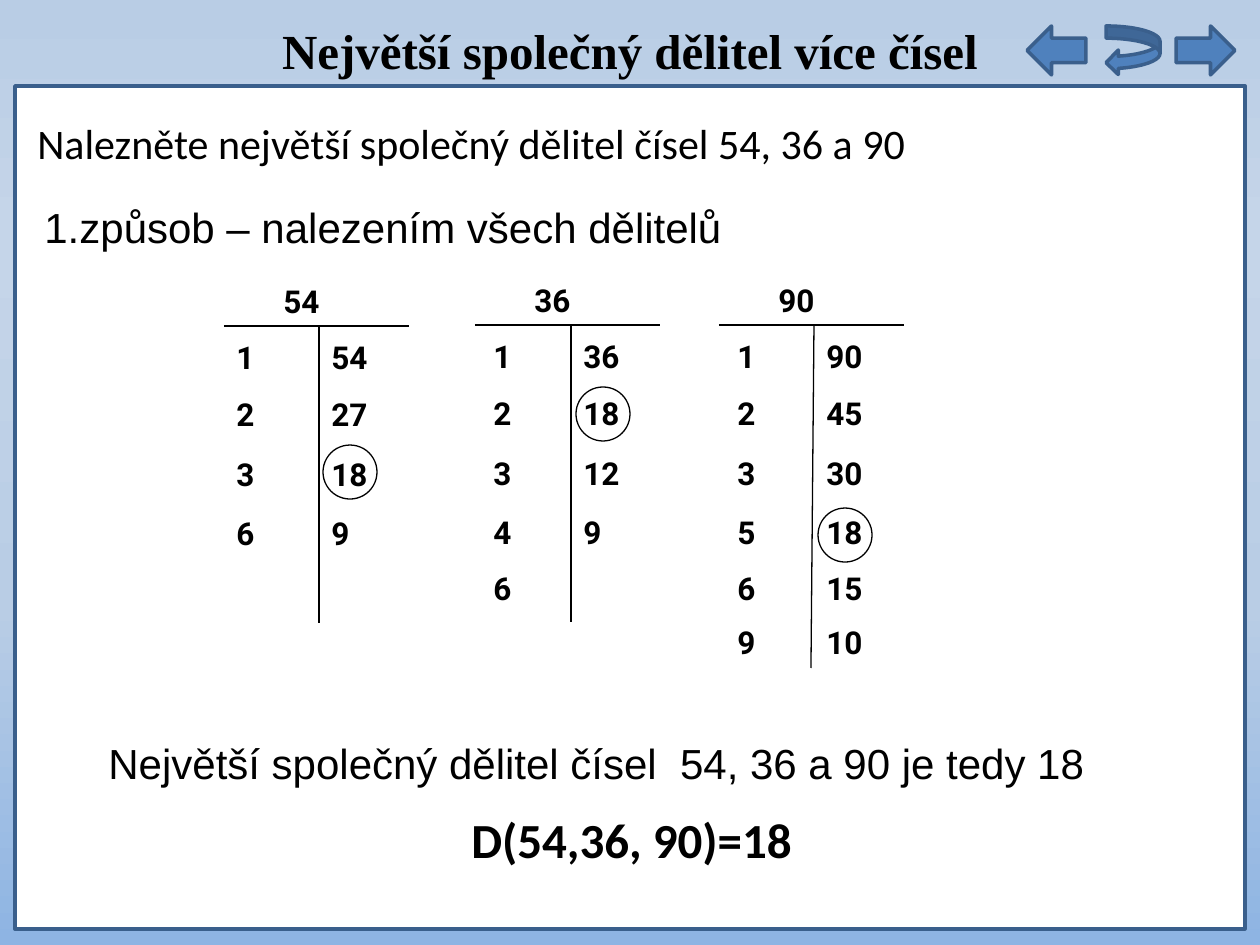
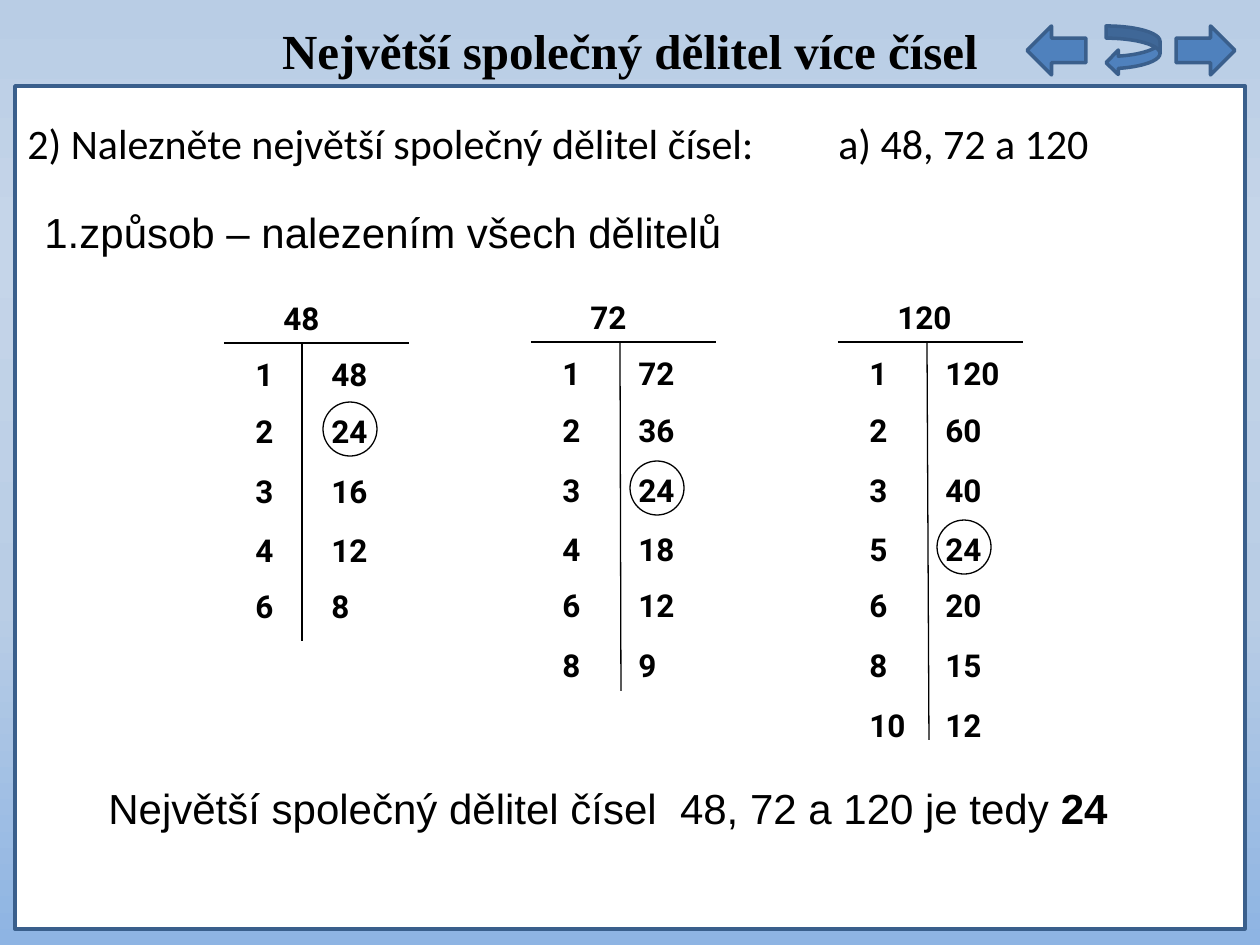
from dataclasses import dataclass
from typing import Any

from lxml import etree
from pptx import Presentation
from pptx import util as u
from pptx.dml import color
from pptx.enum import shapes, text
from pptx.oxml import ns

EMU_PER_PX = 914400 / 126
SLIDE_WIDTH, SLIDE_HEIGHT = 1260, 945

WHITE, BLACK = "FFFFFF", "000000"
ARROW_BLUE, BORDER_BLUE = "4F81BD", "3A5F8C"
BACKGROUND_STOPS = ((0, "B9CDE5"), (25, "C5D5E9"), (64, "B9CDE5"), (100, "8EB4E3"))

TITLE = "Největší společný dělitel více čísel"
METHOD = "1.způsob – nalezením všech dělitelů"

TITLE_FONT = {"name": "Times New Roman", "size": u.Pt(28), "bold": True}
TASK_FONT = {"name": "Calibri", "size": u.Pt(24), "bold": False}
BODY_FONT = {"name": "Arial", "size": u.Pt(24), "bold": False}
NUMBER_FONT = {"name": "Roboto", "size": u.Pt(18), "bold": True}
RESULT_FONT = {"name": "Calibri", "size": u.Pt(28), "bold": True}

# Divisor rows, measured down from the line under the number
ROW_OFFSETS = (6, 63, 123, 182, 238, 298, 358)
SHORT_LAST_ROW = ROW_OFFSETS[:5] + (292,)
CELL_WIDTH, CELL_HEIGHT = 89, 50
HEADER_INDENT, HEADER_LINE = 47, 185
CIRCLE_SIZE = 54


@dataclass(frozen=True)
class Label:
    text: str
    left: int
    top: int
    width: int
    height: int
    font: dict[str, Any]
    bold_ending: str = ""
    centred: bool = False
    middle: bool = False
    tab: int = 0


@dataclass(frozen=True)
class DivisorTable:
    """Pairs of divisors; bar_top and bar_bottom are the ends of the dividing line."""
    number: int
    left: int
    top: int
    small_left: int
    large_left: int
    bar_top: int
    bar_bottom: int
    bar_height: int
    small: tuple[int, ...]
    large: tuple[int, ...]
    circled: int
    circle_shift: tuple[int, int] = (4, -4)
    rows: tuple[int, ...] = ROW_OFFSETS


@dataclass(frozen=True)
class Exercise:
    labels: tuple[Label, ...]
    tables: tuple[DivisorTable, ...]


EXERCISES = (
    Exercise(
        (
            Label("Nalezněte největší společný dělitel čísel 54, 36 a 90",
                  25, 111, 1250, 64, TASK_FONT),
            Label(METHOD, 32, 195, 1191, 63, BODY_FONT),
            Label("Největší společný dělitel čísel  54, 36 a 90 je tedy 18",
                  96, 731, 1062, 64, BODY_FONT),
            Label("D(54,36, 90)=18", 459, 794, 430, 89, RESULT_FONT, middle=True),
        ),
        (
            DivisorTable(54, 224, 326, 224, 319, 319, 319, 297,
                         (1, 2, 3, 6), (54, 27, 18, 9), 18),
            DivisorTable(36, 475, 325, 481, 571, 571, 571, 297,
                         (1, 2, 3, 4, 6), (36, 18, 12, 9), 18, (5, -1)),
            DivisorTable(90, 719, 325, 725, 814, 814, 811, 343,
                         (1, 2, 3, 5, 6, 9), (90, 45, 30, 18, 15, 10), 18,
                         (4, 1), SHORT_LAST_ROW),
        ),
    ),
    Exercise(
        (
            Label("2) Nalezněte největší společný dělitel čísel:\ta) 48, 72 a 120",
                  15, 111, 1250, 64, TASK_FONT, tab=811),
            Label(METHOD, 32, 200, 1191, 63, BODY_FONT),
            Label("Největší společný dělitel čísel  48, 72 a 120 je tedy ",
                  96, 776, 1109, 64, BODY_FONT, bold_ending="24"),
        ),
        (
            DivisorTable(48, 224, 343, 243, 319, 302, 302, 298,
                         (1, 2, 3, 4, 6), (48, 24, 16, 12, 8), 24),
            DivisorTable(72, 531, 342, 550, 626, 620, 621, 349,
                         (1, 2, 3, 4, 6, 8), (72, 36, 24, 18, 12, 9), 24),
            DivisorTable(120, 838, 342, 857, 933, 927, 929, 398,
                         (1, 2, 3, 5, 6, 8, 10), (120, 60, 40, 24, 20, 15, 12), 24),
        ),
    ),
)


def px(length: int) -> u.Emu:
    return u.Emu(round(length * EMU_PER_PX))


def rgb(value: str) -> color.RGBColor:
    return color.RGBColor.from_string(value)


def set_line(line, value: str, points: float) -> None:
    line.color.rgb = rgb(value)
    line.width = u.Pt(points)


def add_run(paragraph, content: str, values: dict[str, Any]) -> None:
    run = paragraph.add_run()
    run.text = content
    run.font.color.rgb = rgb(BLACK)
    for name, value in values.items():
        setattr(run.font, name, value)


def add_tab_stop(paragraph, position: int) -> None:
    properties = paragraph._p.get_or_add_pPr()
    stops = etree.SubElement(properties, ns.qn("a:tabLst"))
    etree.SubElement(stops, ns.qn("a:tab"), pos=str(px(position)), algn="l")


def add_label(slide, label: Label) -> None:
    box = slide.shapes.add_textbox(
        px(label.left), px(label.top), px(label.width), px(label.height))
    frame = box.text_frame
    frame.word_wrap = True
    if label.middle:
        frame.vertical_anchor = text.MSO_ANCHOR.MIDDLE
    else:
        frame.auto_size = text.MSO_AUTO_SIZE.SHAPE_TO_FIT_TEXT
    paragraph = frame.paragraphs[0]
    if label.centred:
        paragraph.alignment = text.PP_ALIGN.CENTER
    if label.tab:
        add_tab_stop(paragraph, label.tab)
    add_run(paragraph, label.text, label.font)
    if label.bold_ending:
        add_run(paragraph, label.bold_ending, {**label.font, "bold": True})


def add_preset(slide, kind, left: int, top: int, width: int, height: int,
               fill: str | None, line: str, points: float) -> None:
    shape = slide.shapes.add_shape(kind, px(left), px(top), px(width), px(height))
    shape.shadow.inherit = False
    if fill:
        shape.fill.solid()
        shape.fill.fore_color.rgb = rgb(fill)
    else:
        shape.fill.background()
    set_line(shape.line, line, points)


def add_rule(slide, x1: int, y1: int, x2: int, y2: int) -> None:
    connector = slide.shapes.add_connector(
        shapes.MSO_CONNECTOR.STRAIGHT, px(x1), px(y1), px(x2), px(y2))
    set_line(connector.line, BLACK, 0.75)
    etree.SubElement(connector._element.spPr, ns.qn("a:effectLst"))


def add_number(slide, number: int, left: int, top: int) -> None:
    add_label(slide, Label(str(number), left, top, CELL_WIDTH, CELL_HEIGHT, NUMBER_FONT))


def add_divisor_table(slide, table: DivisorTable) -> None:
    add_number(slide, table.number, table.left + HEADER_INDENT, table.top - CELL_HEIGHT)
    add_rule(slide, table.left, table.top, table.left + HEADER_LINE, table.top)
    add_rule(slide, table.bar_top, table.top,
             table.bar_bottom, table.top + table.bar_height)
    for left, divisors in ((table.small_left, table.small),
                           (table.large_left, table.large)):
        for divisor, offset in zip(divisors, table.rows):
            add_number(slide, divisor, left, table.top + offset)
    shift_x, shift_y = table.circle_shift
    circled_row = table.rows[table.large.index(table.circled)]
    add_preset(slide, shapes.MSO_SHAPE.OVAL, table.large_left + shift_x,
               table.top + circled_row + shift_y, CIRCLE_SIZE, CIRCLE_SIZE,
               None, BLACK, 0.75)


def add_frame(slide) -> None:
    """Draw the white panel, the title and the navigation arrows."""
    kinds = shapes.MSO_SHAPE
    add_preset(slide, kinds.RECTANGLE, 15, 86, 1230, 843, WHITE, BORDER_BLUE, 2)
    for kind, left, width in ((kinds.LEFT_ARROW, 1027, 59),
                              (kinds.CURVED_LEFT_ARROW, 1106, 54),
                              (kinds.RIGHT_ARROW, 1176, 59)):
        add_preset(slide, kind, left, 26, width, 49, ARROW_BLUE, BORDER_BLUE, 2)
    add_label(slide, Label(TITLE, 15, 14, 1230, 72, TITLE_FONT, centred=True))


def set_background(master) -> None:
    fill = master.background.fill
    fill.gradient()
    fill.gradient_angle = 270
    stop_list = next(master._element.iter(ns.qn("a:gsLst")))
    for stop in list(stop_list):
        stop_list.remove(stop)
    for percent, value in BACKGROUND_STOPS:
        stop = etree.SubElement(stop_list, ns.qn("a:gs"), pos=str(percent * 1000))
        etree.SubElement(stop, ns.qn("a:srgbClr"), val=value)


def main() -> None:
    presentation = Presentation()
    presentation.slide_width = px(SLIDE_WIDTH)
    presentation.slide_height = px(SLIDE_HEIGHT)
    set_background(presentation.slide_master)
    for exercise in EXERCISES:
        slide = presentation.slides.add_slide(presentation.slide_layouts[6])
        add_frame(slide)
        for label in exercise.labels:
            add_label(slide, label)
        for table in exercise.tables:
            add_divisor_table(slide, table)
    presentation.save("out.pptx")


if __name__ == "__main__":
    main()
